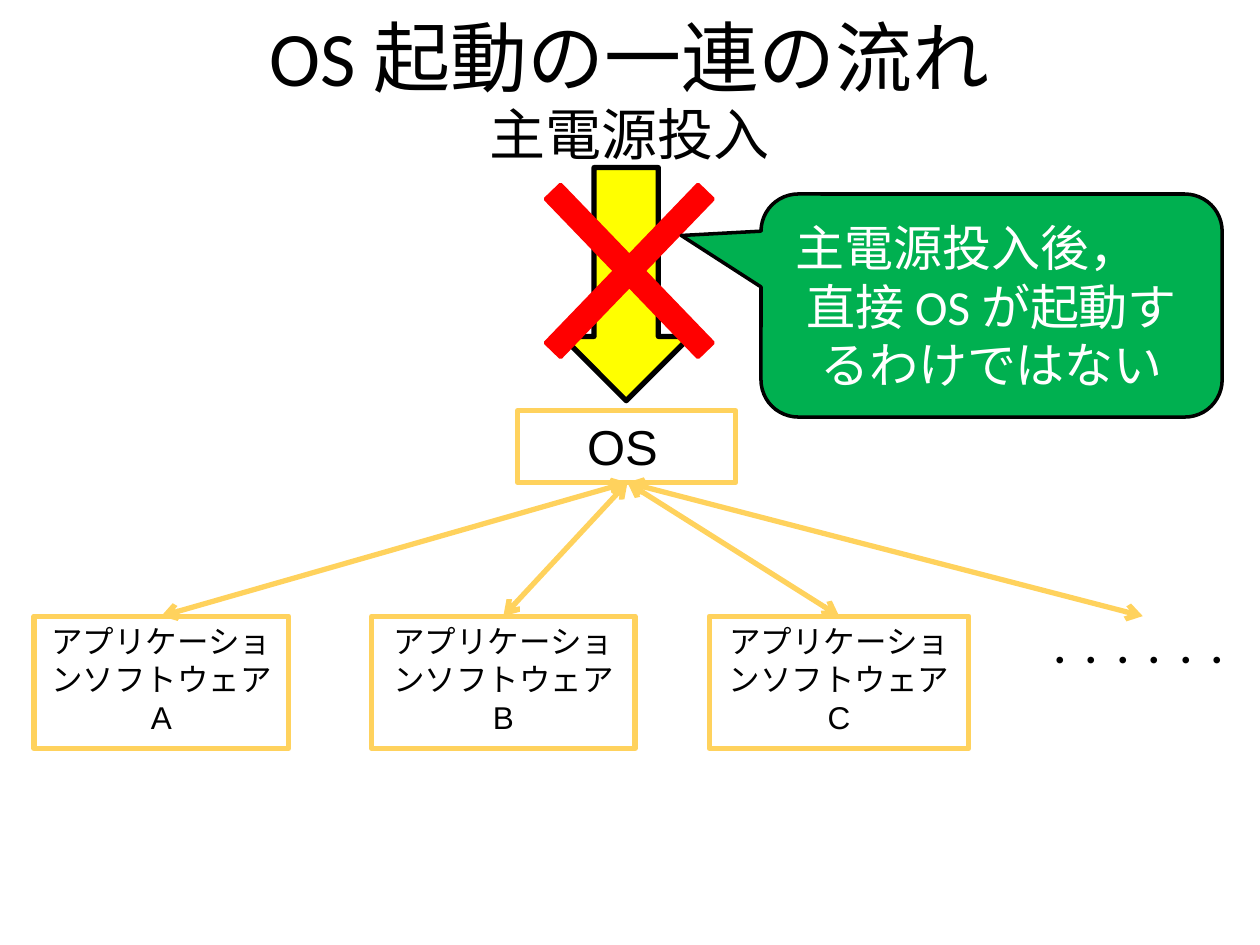
from dataclasses import dataclass

from lxml import etree
from pptx import Presentation
from pptx import util as u
from pptx.dml.color import RGBColor
from pptx.enum import shapes, text
from pptx.oxml.ns import qn

SHAPE = shapes.MSO_SHAPE
ALIGN = text.PP_ALIGN
ANCHOR = text.MSO_ANCHOR


@dataclass(frozen=True)
class Theme:
    ink: str = "000000"
    paper: str = "FFFFFF"
    frame: str = "FFD25D"
    arrow: str = "FFFF00"
    cross: str = "FF0000"
    callout: str = "00B050"
    body_font: str = "Arial"
    head_font: str = "Calibri"
    title: int = 44
    stage: int = 32
    label: int = 28
    small: int = 18
    thick: int = 3
    thin: int = 2


T = Theme()


def rgb(value):
    return RGBColor.from_string(value)


def inches(box):
    return [u.Inches(v) for v in box]


def write(sp, runs, font=T.body_font, color=T.ink, align=ALIGN.CENTER, anchor=ANCHOR.TOP):
    """Fill one paragraph from (wording, size) runs."""
    tf = sp.text_frame
    tf.word_wrap = True
    tf.auto_size = text.MSO_AUTO_SIZE.NONE
    tf.vertical_anchor = anchor
    p = tf.paragraphs[0]
    p.alignment = align
    for wording, size in runs:
        r = p.add_run()
        r.text = wording
        r.font.size = u.Pt(size)
        r.font.name = font
        r.font.color.rgb = rgb(color)


def add_block(s, kind, box, fill, line=None, width=T.thick, adjust=()):
    sp = s.shapes.add_shape(kind, *inches(box))
    sp.shadow.inherit = False
    sp.fill.solid()
    sp.fill.fore_color.rgb = rgb(fill)
    if line:
        sp.line.color.rgb = rgb(line)
        sp.line.width = u.Pt(width)
    else:
        sp.line.fill.background()
    for i, value in enumerate(adjust):
        sp.adjustments[i] = value
    return sp


def add_link(s, start, end):
    """Line with an open arrowhead at both ends."""
    link = s.shapes.add_connector(shapes.MSO_CONNECTOR.STRAIGHT, *inches(start + end))
    link.line.color.rgb = rgb(T.frame)
    link.line.width = u.Pt(T.thick)
    ln = link.line._get_or_add_ln()
    for tag in ("a:headEnd", "a:tailEnd"):
        etree.SubElement(ln, qn(tag)).set("type", "arrow")
    etree.SubElement(link._element.spPr, qn("a:effectLst"))


def add_title(s, box):
    sp = s.shapes.title
    sp.left, sp.top, sp.width, sp.height = inches(box)
    write(sp, [("OS 起動の一連の流れ", T.title)], T.head_font, anchor=ANCHOR.MIDDLE)


def add_stages(s, power_box, os_box):
    power = add_block(s, SHAPE.RECTANGLE, power_box, T.paper)
    write(power, [("主電源投入", T.stage)])
    system = add_block(s, SHAPE.RECTANGLE, os_box, T.paper, T.frame)
    write(system, [("OS", T.label), (" ", T.small)])


def add_applications(s, box, hub):
    """Row of applications, each tall enough for three lines and linked to the hub."""
    left, top, width, height = box
    pitch = 2.68
    ends = []
    for i, (name, w) in enumerate(zip("ABC", (2.02, 2.09, 2.06))):
        x = left + i * pitch
        app = add_block(s, SHAPE.RECTANGLE, (x, top, w, height), T.paper, T.frame)
        write(app, [("アプリケーションソフトウェア" + name, T.small)])
        ends.append((x + w / 2, top))

    # Further applications
    more_w = 1.85
    more_x = left + width - more_w
    more = s.shapes.add_textbox(*inches((more_x, top + 0.15, more_w, 0.4)))
    write(more, [("・・・・・・", T.small)], align=ALIGN.LEFT)
    ends.append((9.07, top))

    for end in ends:
        add_link(s, end, hub)


def add_blocked_arrow(s, arrow_box, cross_box):
    add_block(s, SHAPE.DOWN_ARROW, arrow_box, T.arrow, T.ink, adjust=(0.5, 0.5))
    add_block(s, SHAPE.MATH_MULTIPLY, cross_box, T.cross, T.cross, T.thin, (0.072,))


def add_callout(s, box):
    sp = add_block(s, SHAPE.ROUNDED_RECTANGULAR_CALLOUT, box, T.callout, T.ink,
                   T.thin, (-0.673, -0.314, 0.167))
    write(sp, [("主電源投入後，　 直接 OS が起動するわけではない", T.label)],
          T.head_font, T.paper, anchor=ANCHOR.MIDDLE)


def main():
    prs = Presentation()
    prs.slide_width, prs.slide_height = u.Inches(10), u.Inches(7.5)
    s = prs.slides.add_slide(prs.slide_layouts[5])
    add_title(s, (0.5, -0.18, 9, 1.25))
    add_stages(s, (3.74, 0.74, 2.52, 0.64), (4.11, 3.26, 1.73, 0.57))
    add_applications(s, (0.27, 4.89, 9.77, 1.05), hub=(4.98, 3.83))
    add_blocked_arrow(s, (4.46, 1.33, 1.02, 1.85), (3.83, 0.94, 2.33, 2.42))
    add_callout(s, (6.04, 1.54, 3.66, 1.77))
    prs.save("out.pptx")


if __name__ == "__main__":
    main()
